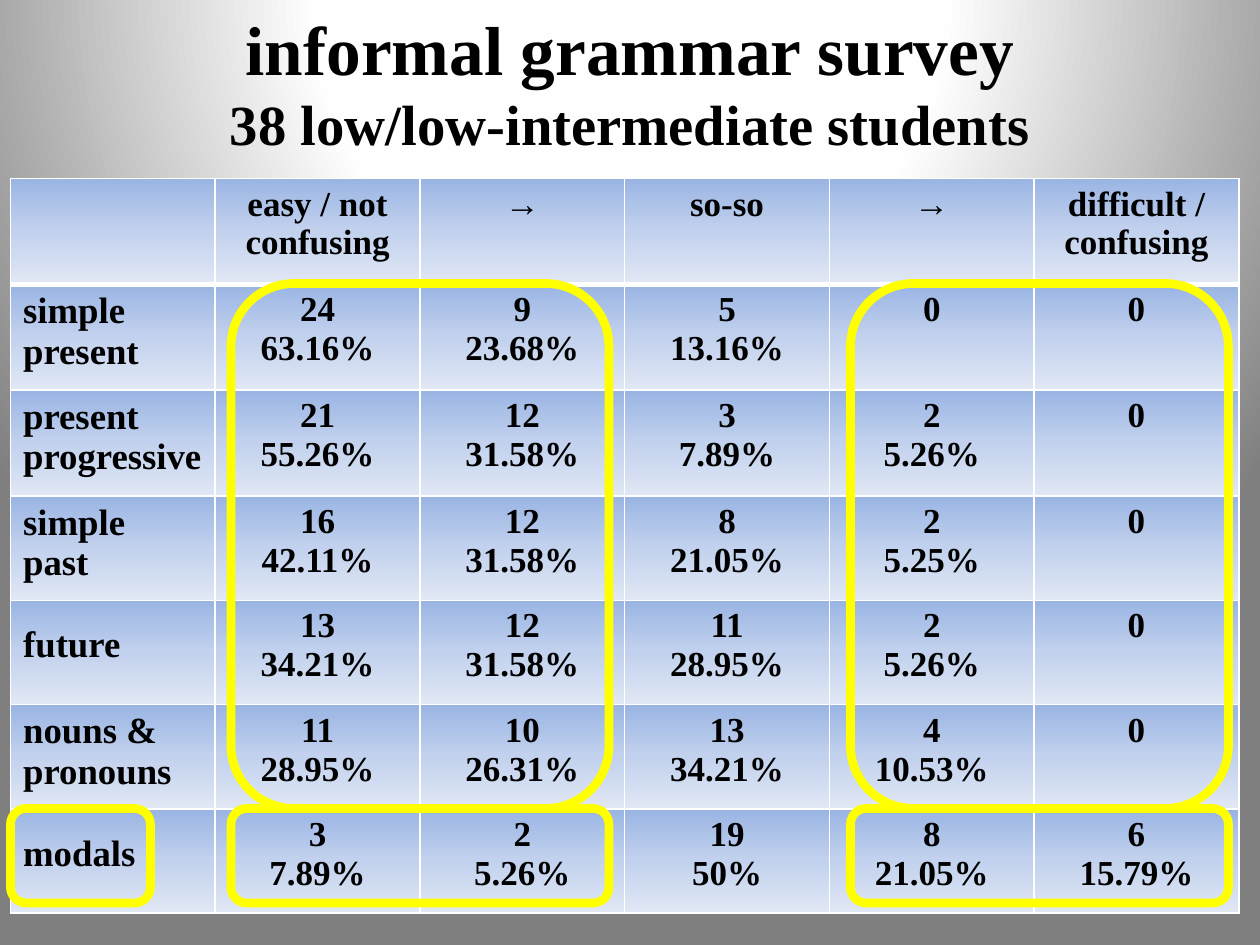
from pptx import Presentation
from pptx.dml.color import RGBColor
from pptx.enum.shapes import MSO_SHAPE
from pptx.enum.text import MSO_ANCHOR, MSO_AUTO_SIZE, PP_ALIGN
from pptx.oxml import parse_xml
from pptx.oxml.ns import nsdecls
from pptx.util import Pt

FONT = "Times New Roman"
COLORS = {
    "text": "000000",
    "border": "FFFFFF",
    "highlight": "FFFF00",
    "cell_top": "9AB5E4",
    "cell_middle": "C2D1ED",
    "cell_bottom": "E1E8F5",
    "glow": "FFFFFF",
    "glow_edge": "FEFEFE",
    "backdrop": "7F7F7F",
}
HEADER = ["", "easy / not confusing", "→", "so-so", "→", "difficult / confusing"]
SURVEY = [
    ["simple present", "24\n63.16%", "9\n23.68%", "5\n13.16%", "0", "0"],
    ["present progressive", "21\n55.26%", "12\n31.58%", "3\n7.89%", "2\n5.26%", "0"],
    ["simple\npast", "16\n42.11%", "12\n31.58%", "8\n21.05%", "2\n5.25%", "0"],
    ["future", "13\n34.21%", "12\n31.58%", "11\n28.95%", "2\n5.26%", "0"],
    ["nouns & pronouns", "11\n28.95%", "10\n26.31%", "13\n34.21%", "4\n10.53%", "0"],
    ["modals", "3\n7.89%", "2\n5.26%", "19\n50%", "8\n21.05%", "6\n15.79%"],
]
ROW_HEIGHTS = [60.5] * 3 + [59.6] * 4


def format_run(run, size):
    """Give a run the slide's bold black serif type."""
    run.font.name = FONT
    run.font.size = Pt(size)
    run.font.bold = True
    run.font.color.rgb = RGBColor.from_string(COLORS["text"])


def gradient(stops, direction):
    """Return a gradient fill element from (percent, colour name) stops."""
    marks = "".join(
        f'<a:gs pos="{percent * 1000}"><a:srgbClr val="{COLORS[name]}"/></a:gs>'
        for percent, name in stops
    )
    return parse_xml(
        f'<a:gradFill {nsdecls("a")} rotWithShape="1">'
        f"<a:gsLst>{marks}</a:gsLst>{direction}</a:gradFill>"
    )


def paint_background(slide):
    """Fill the slide with a round glow centred above its top edge."""
    background = parse_xml(
        f'<p:bg {nsdecls("p", "a")}><p:bgPr><a:effectLst/></p:bgPr></p:bg>'
    )
    glow = gradient(
        [(0, "glow"), (40, "glow_edge"), (100, "backdrop")],
        '<a:path path="circle">'
        '<a:fillToRect l="50000" t="-80000" r="50000" b="180000"/></a:path>',
    )
    background[0].insert(0, glow)
    slide.element.cSld.insert(0, background)


def add_title(slide, left, top, width, height):
    """Place the two-line title in the given box."""
    title = slide.shapes.title
    title.left, title.top, title.width, title.height = map(
        Pt, (left, top, width, height)
    )
    frame = title.text_frame
    frame.text = "informal grammar survey\v38 low/low-intermediate students"
    frame.auto_size = MSO_AUTO_SIZE.NONE
    frame.vertical_anchor = MSO_ANCHOR.MIDDLE
    paragraph = frame.paragraphs[0]
    paragraph.alignment = PP_ALIGN.CENTER
    for run, size in zip(paragraph.runs, (39.6, 32.4)):
        format_run(run, size)


def style_cell(cell, row):
    """Give a cell white borders and a vertical blue gradient."""
    properties = cell._tc.get_or_add_tcPr()
    widths = {"L": 1, "R": 1, "T": 3 if row == 1 else 1, "B": 3 if row == 0 else 1}
    for side, width in widths.items():
        properties.append(parse_xml(
            f'<a:ln{side} {nsdecls("a")} w="{Pt(width)}"><a:solidFill>'
            f'<a:srgbClr val="{COLORS["border"]}"/></a:solidFill></a:ln{side}>'
        ))
    properties.append(gradient(
        [(0, "cell_top"), (50, "cell_middle"), (100, "cell_bottom")],
        '<a:lin ang="5400000" scaled="0"/>',
    ))


def add_survey_table(slide, left, top, width):
    """Place the survey table with equal columns across the given width."""
    rows = [HEADER] + SURVEY
    table = slide.shapes.add_table(
        len(rows), len(HEADER), Pt(left), Pt(top), Pt(width), Pt(sum(ROW_HEIGHTS))
    ).table
    table.first_row = table.horz_banding = False
    for column in table.columns:
        column.width = Pt(width / len(HEADER))
    for row, (values, height) in enumerate(zip(rows, ROW_HEIGHTS)):
        table.rows[row].height = Pt(height)
        for column, value in enumerate(values):
            cell = table.cell(row, column)
            style_cell(cell, row)
            cell.text_frame.text = value
            if value in ("future", "modals"):
                cell.margin_top = Pt(14)
            for paragraph in cell.text_frame.paragraphs:
                paragraph.alignment = PP_ALIGN.CENTER if column else PP_ALIGN.LEFT
                for run in paragraph.runs:
                    format_run(run, 20 if column else 21)


def add_highlight(slide, left, top, width, height):
    """Outline the given box with a rounded yellow frame."""
    shape = slide.shapes.add_shape(
        MSO_SHAPE.ROUNDED_RECTANGLE, Pt(left), Pt(top), Pt(width), Pt(height)
    )
    shape.shadow.inherit = False
    shape.fill.background()
    shape.line.color.rgb = RGBColor.from_string(COLORS["highlight"])
    shape.line.width = Pt(5)


def add_highlights(slide, left, top):
    """Frame the easy and difficult answers and the modals row."""
    modals_top = top + 300
    for answers_left in (left + 126, left + 480):
        add_highlight(slide, answers_left, top, 216, 300)
        add_highlight(slide, answers_left, modals_top, 216, 54)
    add_highlight(slide, left, modals_top, 80, 54)


def main():
    """Build and save the survey slide."""
    presentation = Presentation()
    presentation.slide_width, presentation.slide_height = Pt(720), Pt(540)
    slide = presentation.slides.add_slide(presentation.slide_layouts[5])
    paint_background(slide)
    add_title(slide, 36, 1.5, 648, 90)
    add_survey_table(slide, 6, 102, 702)
    add_highlights(slide, 6, 162)
    presentation.save("out.pptx")


if __name__ == "__main__":
    main()
